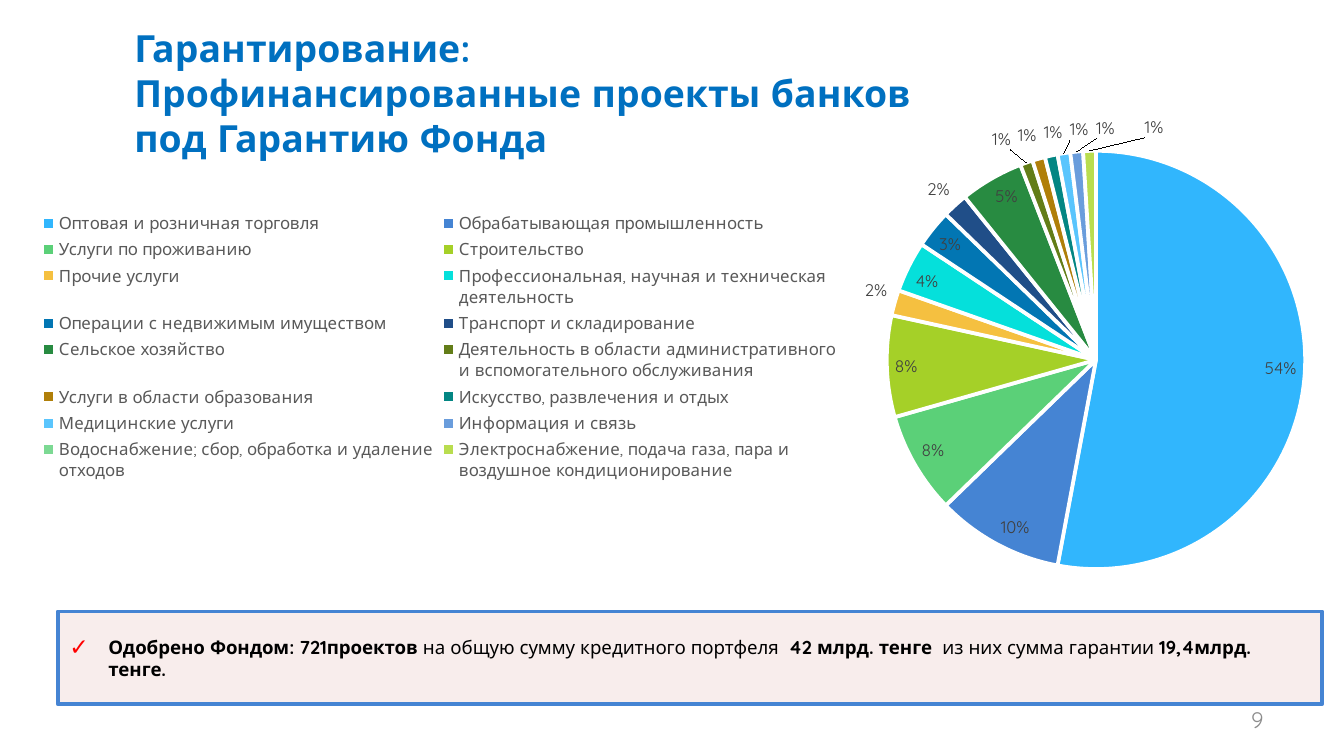
from lxml import etree
from pptx import Presentation
from pptx.chart.data import CategoryChartData
from pptx.dml.color import RGBColor
from pptx.enum.chart import XL_CHART_TYPE, XL_LABEL_POSITION, XL_LEGEND_POSITION
from pptx.enum.shapes import MSO_SHAPE
from pptx.enum.text import MSO_ANCHOR, PP_ALIGN
from pptx.oxml.ns import qn
from pptx.util import Cm, Pt

PIE = XL_CHART_TYPE.PIE
LEFT_LEGEND = XL_LEGEND_POSITION.LEFT
INSIDE, OUTSIDE = XL_LABEL_POSITION.INSIDE_END, XL_LABEL_POSITION.OUTSIDE_END
RECTANGLE = MSO_SHAPE.RECTANGLE
TOP, MIDDLE = MSO_ANCHOR.TOP, MSO_ANCHOR.MIDDLE
LEFT, RIGHT = PP_ALIGN.LEFT, PP_ALIGN.RIGHT

INDUSTRIES = [
    ("Оптовая и розничная торговля", 0.54, "31B6FD"),
    ("Обрабатывающая промышленность", 0.10, "4584D3"),
    ("Услуги по проживанию", 0.08, "5BD078"),
    ("Строительство", 0.08, "A5D028"),
    ("Прочие услуги", 0.02, "F5C040"),
    ("Профессиональная, научная и техническая деятельность", 0.04, "05E0DB"),
    ("Операции с недвижимым имуществом", 0.03, "0276B3"),
    ("Транспорт и складирование", 0.02, "204E88"),
    ("Сельское хозяйство", 0.05, "288B41"),
    ("Деятельность в области административного и вспомогательного обслуживания", 0.01, "637D18"),
    ("Услуги в области образования", 0.01, "B07F09"),
    ("Искусство, развлечения и отдых", 0.01, "038683"),
    ("Медицинские услуги", 0.01, "5AC5FD"),
    ("Информация и связь", 0.01, "6A9DDC"),
    ("Водоснабжение; сбор, обработка и удаление отходов", 0, "7CD993"),
    ("Электроснабжение, подача газа, пара и воздушное кондиционирование", 0.01, "B9DD4F"),
]
LABEL_SHIFTS = {9: -0.01, 10: 0, 11: 0.01, 12: 0.02, 13: 0.03, 14: 0.04, 15: 0.05}
LABEL_RISE = -0.01
SUMMARY = [
    ("Одобрено Фондом: 721проектов ", True),
    ("на общую сумму кредитного портфеля  ", False),
    ("42 млрд. тенге  ", True),
    ("из них сумма гарантии ", False),
    ("19,4млрд. тенге.", True),
]


def rgb(value):
    return RGBColor.from_string(value)


def manual_layout(**settings):
    layout = etree.Element(qn("c:layout"))
    manual = etree.SubElement(layout, qn("c:manualLayout"))
    for tag, value in settings.items():
        etree.SubElement(manual, qn(f"c:{tag}")).set("val", str(value))
    return layout


class SlideBuilder:
    face = "Quicksand"

    def __init__(self, slide):
        self.slide = slide

    def style(self, font, size, color, bold=False):
        font.name = self.face
        font.size = Pt(size)
        font.bold = bold
        font.color.rgb = rgb(color)

    def text(self, box, lines, size, color, bold=False, align=LEFT, anchor=TOP):
        frame = self.slide.shapes.add_textbox(*map(Cm, box)).text_frame
        frame.word_wrap = True
        frame.vertical_anchor = anchor
        frame.text = "\n".join(lines)
        for paragraph in frame.paragraphs:
            paragraph.alignment = align
            for run in paragraph.runs:
                self.style(run.font, size, color, bold)

    def callout(self, box, phrases):
        panel = self.slide.shapes.add_shape(RECTANGLE, *map(Cm, box))
        panel.shadow.inherit = False
        panel.fill.solid()
        panel.fill.fore_color.rgb = rgb("F2DCDB")
        tint = next(panel.element.iter(qn("a:srgbClr")))
        etree.SubElement(tint, qn("a:alpha")).set("val", "50000")
        panel.line.color.rgb = rgb("4584D3")
        panel.line.width = Pt(2)
        frame = panel.text_frame
        frame.word_wrap = True
        frame.vertical_anchor = MIDDLE
        frame.margin_left = frame.margin_right = Cm(0.2)
        frame.margin_top = frame.margin_bottom = Cm(0.1)
        paragraph = frame.paragraphs[0]
        paragraph.alignment = LEFT
        paragraph.space_after = Pt(6)
        self.check_bullet(paragraph)
        for phrase, bold in phrases:
            run = paragraph.add_run()
            run.text = phrase
            self.style(run.font, 10, "000000", bold)

    def check_bullet(self, paragraph):
        properties = paragraph._p.get_or_add_pPr()
        properties.set("marL", str(Cm(0.76)))
        properties.set("indent", str(Cm(-0.74)))
        color = etree.SubElement(properties, qn("a:buClr"))
        etree.SubElement(color, qn("a:srgbClr")).set("val", "FF0000")
        etree.SubElement(properties, qn("a:buSzPct")).set("val", "125000")
        etree.SubElement(properties, qn("a:buFont")).set("typeface", self.face)
        etree.SubElement(properties, qn("a:buChar")).set("char", "✓")

    def pie(self, box, industries):
        data = CategoryChartData(number_format="0%")
        data.categories = [name for name, _, _ in industries]
        data.add_series("Series 1", [share for _, share, _ in industries])
        chart = self.slide.shapes.add_chart(PIE, *map(Cm, box), data).chart
        self.style(chart.font, 10, "000000")
        chart.has_title = False
        chart.has_legend = True
        chart.legend.position = LEFT_LEGEND
        chart.legend.include_in_layout = False
        self.style(chart.legend.font, 9, "595959")

        plot = chart.plots[0]
        plot.vary_by_categories = True
        shares = plot.series[0]
        labels = shares.data_labels
        labels.show_value = True
        labels.show_percentage = False
        labels.number_format = "0%"
        labels.number_format_is_linked = False
        labels.position = INSIDE
        self.style(labels.font, 9, "404040")
        for index, (_, share, color) in enumerate(industries):
            point = shares.points[index]
            point.format.fill.solid()
            point.format.fill.fore_color.rgb = rgb(color)
            point.format.line.color.rgb = rgb("FFFFFF")
            point.format.line.width = Pt(2)
            if share <= 0.02:
                point.data_label.position = OUTSIDE
                self.style(point.data_label.font, 9, "404040")
        self.arrange(chart)

    def arrange(self, chart):
        for label in chart.element.iter(qn("c:dLbl")):
            index = int(label.find(qn("c:idx")).get("val"))
            if index in LABEL_SHIFTS:
                label.insert(1, manual_layout(x=LABEL_SHIFTS[index], y=LABEL_RISE))
        plot_area = next(chart.element.iter(qn("c:plotArea")))
        for previous in plot_area.findall(qn("c:layout")):
            plot_area.remove(previous)
        plot_area.insert(0, manual_layout(
            layoutTarget="inner", xMode="edge", yMode="edge", x=0.66, y=0.13, w=0.33, h=0.79))


def main():
    deck = Presentation()
    deck.slide_width, deck.slide_height = Cm(25.4), Cm(14.29)
    builder = SlideBuilder(deck.slides.add_slide(deck.slide_layouts[6]))
    builder.text((18.21, 13.23, 5.92, 0.76), ["9"], 12, "8C8C8C", align=RIGHT, anchor=MIDDLE)
    title = ["Гарантирование:", "Профинансированные проекты банков", "под Гарантию Фонда"]
    builder.text((2.29, 0.36, 20.6, 1.6), title, 20, "0070C0", bold=True)
    builder.callout((1.09, 11.56, 23.9, 1.75), SUMMARY)
    builder.pie((0.51, 1.55, 24.49, 10.01), INDUSTRIES)
    deck.save("out.pptx")


if __name__ == "__main__":
    main()
